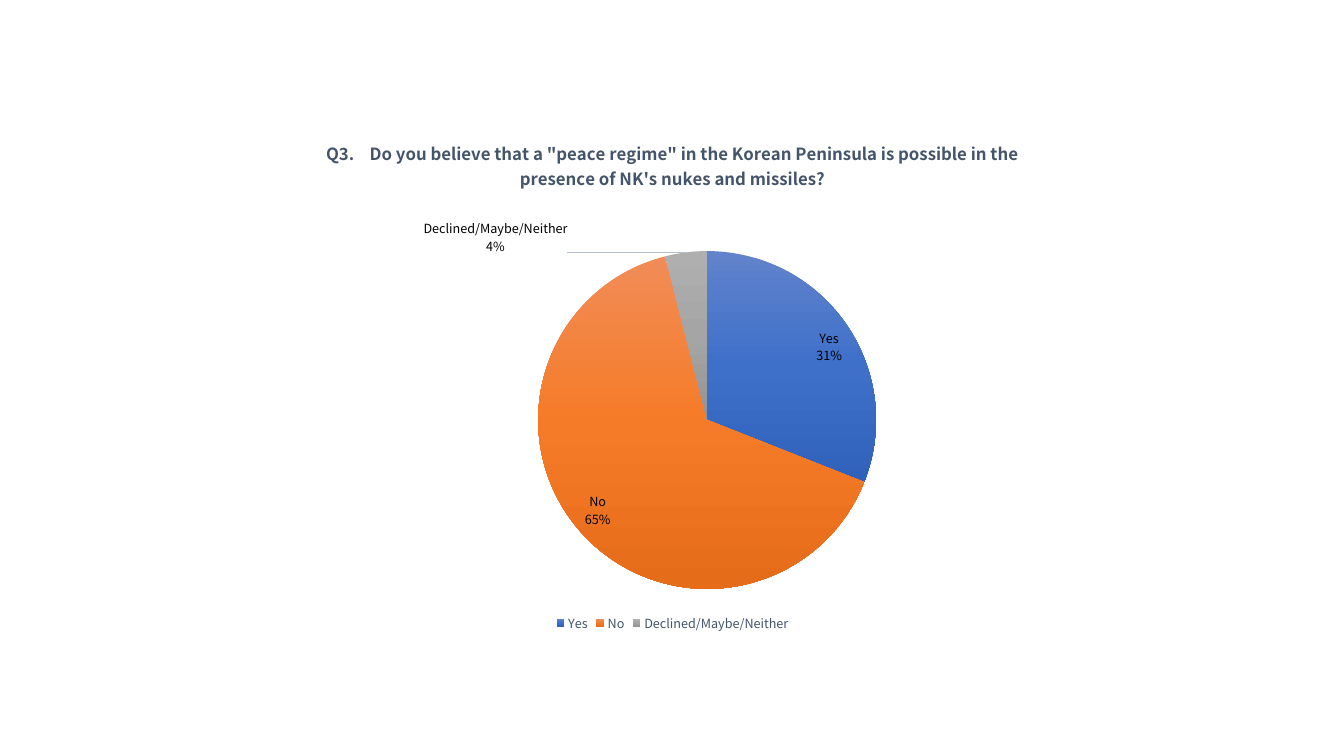
from copy import deepcopy

from pptx import Presentation
from pptx.chart.data import CategoryChartData
from pptx.dml.color import RGBColor
from pptx.enum.chart import XL_CHART_TYPE, XL_LABEL_POSITION, XL_LEGEND_POSITION
from pptx.oxml import parse_xml
from pptx.oxml.ns import nsdecls
from pptx.util import Emu, Pt

COLORS = {
    "heading": "44546A",
    "label": "000000",
    "leader": "B4C0CF",
}
ANSWERS = {
    "Yes": (31, ("6183CB", "3E70CA", "3062BB")),
    "No": (65, ("F18C57", "F67B28", "E56C19")),
    "Declined/Maybe/Neither": (4, ("AFAFAF", "A5A5A5", "939393")),
}
QUESTION = (
    "Q3.    Do you believe that a \"peace regime\" in the Korean Peninsula "
    "is possible in the presence of NK's nukes and missiles?"
)
CHART_BOX = (216, 120, 913, 516)
PIE_BOX = (538, 251, 338, 338)
CALLOUT_SHIFT = (-118, 8)


class SurveySlide:
    """Draw survey charts on one slide in a shared style."""

    FONT = "Noto Sans CJK KR"
    EMU_PER_PX = 914400 / 100.8

    def __init__(self, presentation):
        presentation.slide_width = self.px(1344)
        presentation.slide_height = self.px(756)
        self.slide = presentation.slides.add_slide(presentation.slide_layouts[6])

    def px(self, length):
        return Emu(round(length * self.EMU_PER_PX))

    def style(self, font, size, color, bold=False):
        values = {"name": self.FONT, "size": Pt(size), "bold": bold}
        for attribute, value in values.items():
            setattr(font, attribute, value)
        font.color.rgb = RGBColor.from_string(COLORS[color])

    def layout(self, **parts):
        tags = "".join(f'<c:{tag} val="{value}"/>' for tag, value in parts.items())
        return parse_xml(
            f'<c:layout {nsdecls("c")}><c:manualLayout>{tags}'
            "</c:manualLayout></c:layout>"
        )

    def pie(self, box, pie_box, question, answers):
        data = CategoryChartData()
        data.categories = list(answers)
        data.add_series(question, [share for share, _ in answers.values()])
        frame = self.slide.shapes.add_chart(XL_CHART_TYPE.PIE, *map(self.px, box), data)
        chart = frame.chart
        self.style(chart.font, 10, "label")
        self.heading(chart, question)
        self.legend(chart)

        left, top, width, height = box
        pie_left, pie_top, pie_width, pie_height = pie_box
        plot_area = chart._chartSpace.chart.plotArea
        for automatic in plot_area.xpath("c:layout"):
            plot_area.remove(automatic)
        plot_area.insert(0, self.layout(
            layoutTarget="inner", xMode="edge", yMode="edge",
            x=round((pie_left - left) / width, 2 + 1),
            y=round((pie_top - top) / height, 2 + 1),
            w=round(pie_width / width, 2 + 1),
            h=round(pie_height / height, 2 + 1),
        ))
        survey = chart.plots[0].series[0]
        for index, (_, shades) in enumerate(answers.values()):
            self.gradient(survey.points[index].format.fill, shades, survey, index)
        return survey

    def heading(self, chart, question):
        chart.has_title = True
        paragraph = chart.chart_title.text_frame.paragraphs[0]
        wording = paragraph.add_run()
        wording.text = question
        self.style(wording.font, 12, "heading", bold=True)

    def legend(self, chart):
        chart.has_legend = True
        chart.legend.position = XL_LEGEND_POSITION.BOTTOM
        chart.legend.include_in_layout = False
        self.style(chart.legend.font, 9, "heading")

    def gradient(self, fill, shades, survey, index):
        fill.gradient()
        fill.gradient_angle = 270
        stops = survey._element.xpath(f"c:dPt[c:idx/@val={index}]//a:gsLst")[0]
        stops.append(deepcopy(stops[0]))
        for stop, shade, position in zip(fill.gradient_stops, shades, (0, 0.5, 1)):
            stop.color.rgb = RGBColor.from_string(shade)
            stop.position = position

    def labels(self, survey):
        labels = survey.data_labels
        values = {
            "number_format": "0%",
            "number_format_is_linked": False,
            "position": XL_LABEL_POSITION.INSIDE_END,
            "show_value": False,
            "show_category_name": True,
            "show_percentage": True,
            "show_legend_key": False,
        }
        for attribute, value in values.items():
            setattr(labels, attribute, value)
        self.style(labels.font, 9, "label")
        element = labels._element
        self.separate_lines(element)
        for leader_setting in element.xpath("c:showLeaderLines"):
            element.remove(leader_setting)
        element.append(parse_xml(f'<c:showLeaderLines {nsdecls("c")} val="1"/>'))
        element.append(parse_xml(
            f'<c:leaderLines {nsdecls("c", "a")}><c:spPr><a:ln w="9525"><a:solidFill>'
            f'<a:srgbClr val="{COLORS["leader"]}"/></a:solidFill></a:ln></c:spPr>'
            "</c:leaderLines>"
        ))

    def separate_lines(self, element):
        separator = parse_xml(f'<c:separator {nsdecls("c")}>\n</c:separator>')
        flags = element.xpath("c:showPercent | c:showBubbleSize")
        flags[-1].addnext(separator)

    def callout(self, survey, index, box, shift):
        label = survey.points[index].data_label
        label.position = XL_LABEL_POSITION.OUTSIDE_END
        self.style(label.font, 9, "label")
        element = survey._element.xpath(f"c:dLbls/c:dLbl[c:idx/@val={index}]")[0]
        flags = {"showVal": 0, "showCatName": 1, "showPercent": 1}
        for tag, value in flags.items():
            element.xpath(f"c:{tag}")[0].set("val", str(value))
        self.separate_lines(element)
        x, y = (round(move / side, 3) for move, side in zip(shift, box[2:]))
        element.xpath("c:idx")[0].addnext(self.layout(x=x, y=y))


def main():
    presentation = Presentation()
    survey_slide = SurveySlide(presentation)
    survey = survey_slide.pie(CHART_BOX, PIE_BOX, QUESTION, ANSWERS)
    survey_slide.labels(survey)
    survey_slide.callout(survey, 2, CHART_BOX, CALLOUT_SHIFT)
    presentation.save("out.pptx")


if __name__ == "__main__":
    main()
